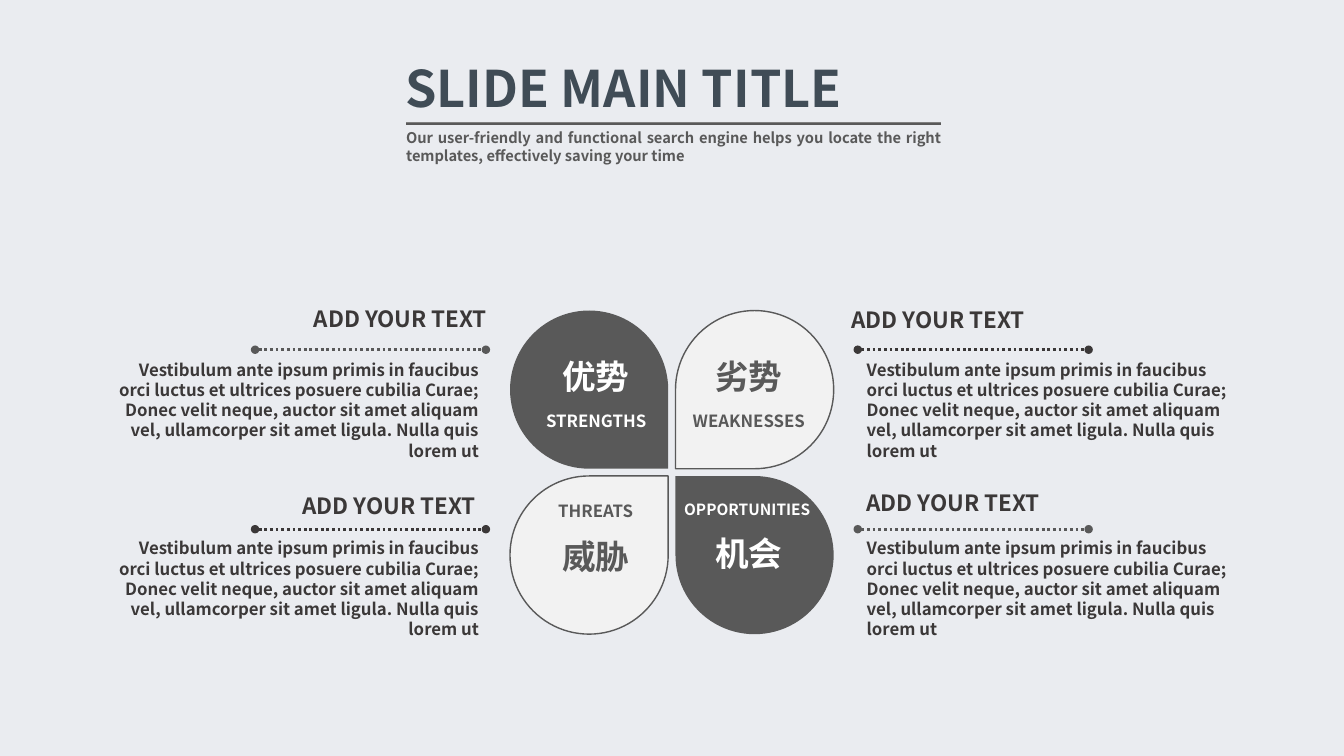
from lxml import etree
from pptx import Presentation
from pptx.dml.color import RGBColor
from pptx.enum.dml import MSO_LINE
from pptx.enum.shapes import MSO_CONNECTOR, MSO_SHAPE
from pptx.enum.text import MSO_ANCHOR, MSO_AUTO_SIZE, PP_ALIGN
from pptx.oxml.ns import qn
from pptx.util import Pt

STRAIGHT = MSO_CONNECTOR.STRAIGHT
TEARDROP = MSO_SHAPE.TEAR
DOTTED = MSO_LINE.ROUND_DOT
LEFT, CENTER, RIGHT = PP_ALIGN.LEFT, PP_ALIGN.CENTER, PP_ALIGN.RIGHT
JUSTIFY = PP_ALIGN.JUSTIFY

BACKGROUND = RGBColor(0xEA, 0xEC, 0xF0)
GRAY = RGBColor(0x59, 0x59, 0x59)
LIGHT = RGBColor(0xF2, 0xF2, 0xF2)
MIDDLE_GRAY = RGBColor(0x80, 0x80, 0x80)
DARK = RGBColor(0x3B, 0x38, 0x38)
SLATE = RGBColor(0x40, 0x4C, 0x56)
WHITE = RGBColor(0xFF, 0xFF, 0xFF)

FONT = "Noto Sans CJK SC"
LINE_HEIGHT = 1.2
BODY = ("Vestibulum ante ipsum primis in faucibus orci luctus et ultrices posuere "
        "cubilia Curae; Donec velit neque, auctor sit amet aliquam vel, "
        "ullamcorper sit amet ligula. Nulla quis lorem ut")

PETAL_LEFT, PETAL_TOP = 364.3, 221.8
PETAL_SIZE, PETAL_STEP = 113, 118.2

# column, row, rotation, dark petal?, (label, size, box), (word, box)
PETALS = [
    (0, 0, 90, True, ("STRENGTHS", 12, (381.6, 289.4, 88.6, 21.6)),
     ("优势", (393.8, 249.8, 63.4, 36))),
    (1, 0, 180, False, ("WEAKNESSES", 12, (486, 289.4, 97.9, 21.6)),
     ("劣势", (503.3, 249.8, 63.4, 36))),
    (0, 1, 0, False, ("THREATS", 12, (390.2, 353.5, 70.6, 21.6)),
     ("威胁", (393.8, 378, 63.4, 36))),
    (1, 1, 270, True, ("OPPORTUNITIES", 11, (480.2, 352.8, 107.3, 20.9)),
     ("机会", (503.3, 375.8, 63.4, 36))),
]

# heading box, body left and top, rule left and y, rule colour, alignment
NOTES = [
    ((185.8, 213.8, 169.2, 26.6), (67.7, 252.7), (182.2, 249.8), GRAY, RIGHT),
    ((154.8, 347, 192.2, 26.6), (67.7, 380.2), (182.2, 378), DARK, RIGHT),
    ((601.2, 214.6, 169.9, 26.6), (612, 252.7), (612.7, 249.8), DARK, LEFT),
    ((612, 344.9, 184.3, 26.6), (612, 380.2), (612.7, 378), GRAY, LEFT),
]
BODY_SIZE = (281.5, 79.9)
RULE_LENGTH = 164.9


def write_text(shape, text, size, color, align=LEFT, wrap=True, line_height=LINE_HEIGHT):
    frame = shape.text_frame
    frame.auto_size = MSO_AUTO_SIZE.NONE
    frame.word_wrap = wrap
    frame.vertical_anchor = MSO_ANCHOR.TOP
    frame.margin_left = frame.margin_right = Pt(7.2)
    frame.margin_top = Pt(3.6 + 0.05 * size)
    frame.margin_bottom = Pt(0)
    paragraph = frame.paragraphs[0]
    paragraph.alignment = align
    paragraph.line_spacing = Pt(round(size * line_height, 1))
    paragraph.space_before = Pt(0)
    run = paragraph.add_run()
    run.text = text
    font = run.font
    font.name, font.size, font.bold = FONT, Pt(size), True
    font.color.rgb = color
    east_asian = etree.SubElement(font._element, qn("a:ea"))
    east_asian.set("typeface", FONT)


def add_text(slide, box, text, size, color, **text_format):
    shape = slide.shapes.add_textbox(*map(Pt, box))
    write_text(shape, text, size, color, **text_format)


def add_rule(slide, left, y, length, color, width=1, dotted=False):
    rule = slide.shapes.add_connector(STRAIGHT, Pt(left), Pt(y), Pt(left + length), Pt(y))
    rule.line.color.rgb = color
    rule.line.width = Pt(width)
    if dotted:
        rule.line.dash_style = DOTTED
        line = rule.line._get_or_add_ln()
        for end in ("a:headEnd", "a:tailEnd"):
            etree.SubElement(line, qn(end)).set("type", "oval")
    etree.SubElement(rule._element.spPr, qn("a:effectLst"))


def add_petal(slide, column, row, rotation, dark):
    petal = slide.shapes.add_shape(
        TEARDROP, Pt(PETAL_LEFT + column * PETAL_STEP), Pt(PETAL_TOP + row * PETAL_STEP),
        Pt(PETAL_SIZE), Pt(PETAL_SIZE))
    petal.rotation = rotation
    petal.shadow.inherit = False
    petal.fill.solid()
    petal.fill.fore_color.rgb = GRAY if dark else LIGHT
    if dark:
        petal.line.fill.background()
    else:
        petal.line.color.rgb = GRAY
        petal.line.width = Pt(1)


def add_header(slide):
    title = slide.shapes.title
    title.left, title.top, title.width, title.height = map(Pt, (282.2, 35.3, 398.2, 51.1))
    write_text(title, "SLIDE MAIN TITLE", 36, SLATE, align=JUSTIFY)
    add_text(slide, (283, 88.6, 396.7, 33.8),
             "Our user-friendly and functional search engine helps you locate the right "
             "templates, effectively saving your time",
             10.5, GRAY, align=JUSTIFY, line_height=1.16)
    add_rule(slide, 290.2, 87.8, 382.3, MIDDLE_GRAY)
    add_rule(slide, 290.2, 88.6, 382.3, GRAY)


def main():
    presentation = Presentation()
    presentation.slide_width, presentation.slide_height = Pt(960), Pt(540)
    slide = presentation.slides.add_slide(presentation.slide_layouts[5])
    slide.background.fill.solid()
    slide.background.fill.fore_color.rgb = BACKGROUND

    add_header(slide)

    # SWOT petals
    for column, row, rotation, dark, (label, size, label_box), (word, word_box) in PETALS:
        add_petal(slide, column, row, rotation, dark)
        color = WHITE if dark else GRAY
        add_text(slide, label_box, label, size, color, align=CENTER, wrap=False)
        add_text(slide, word_box, word, 24, color, align=CENTER, wrap=False)

    # Notes on both sides
    for heading_box, body_corner, rule_start, rule_color, align in NOTES:
        add_rule(slide, *rule_start, RULE_LENGTH, rule_color, width=2, dotted=True)
        add_text(slide, heading_box, "ADD YOUR TEXT", 16, DARK, align=align)
        add_text(slide, body_corner + BODY_SIZE, BODY, 12, DARK, align=align)

    presentation.save("out.pptx")


if __name__ == "__main__":
    main()
